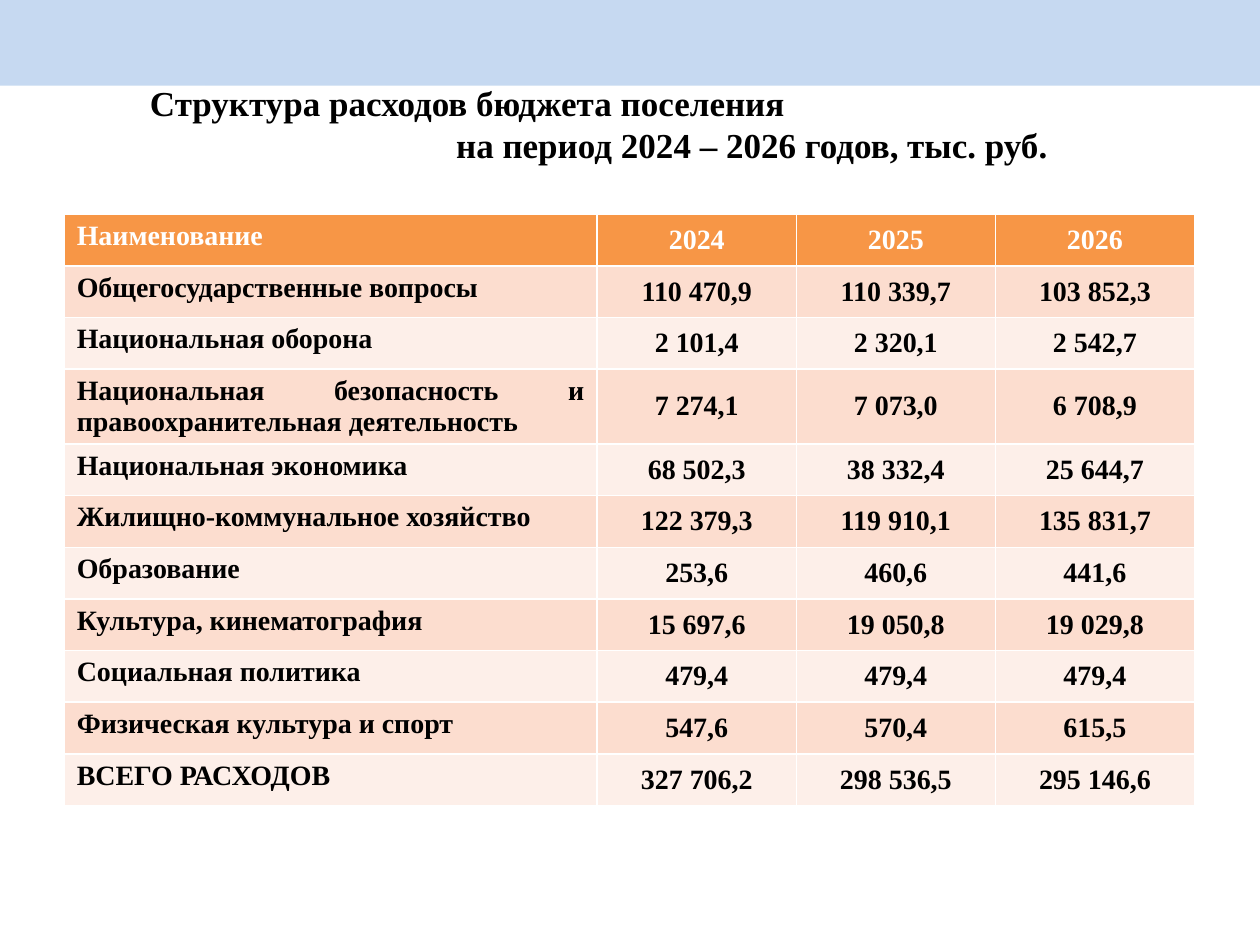
from pptx import Presentation
from pptx.dml.color import RGBColor
from pptx.enum.shapes import MSO_SHAPE
from pptx.enum.text import MSO_ANCHOR, MSO_AUTO_SIZE, PP_ALIGN
from pptx.util import Inches, Pt

COLORS = {
    "band": "C6D9F1",
    "header": "F79646",
    "odd": "FCDDCF",
    "even": "FDEFE9",
    "text": "000000",
    "header_text": "FFFFFF",
}
FONT = "Times New Roman"

# Each title line with its left indent in inches
TITLE = [
    ("Структура расходов бюджета поселения", 0.03),
    ("на период 2024 – 2026 годов, тыс. руб.", 2.46),
]
ROWS = [
    ("Наименование", "2024", "2025", "2026"),
    ("Общегосударственные вопросы", "110 470,9", "110 339,7", "103 852,3"),
    ("Национальная оборона", "2 101,4", "2 320,1", "2 542,7"),
    ("Национальная безопасность и правоохранительная деятельность",
     "7 274,1", "7 073,0", "6 708,9"),
    ("Национальная экономика", "68 502,3", "38 332,4", "25 644,7"),
    ("Жилищно-коммунальное хозяйство", "122 379,3", "119 910,1", "135 831,7"),
    ("Образование", "253,6", "460,6", "441,6"),
    ("Культура, кинематография", "15 697,6", "19 050,8", "19 029,8"),
    ("Социальная политика", "479,4", "479,4", "479,4"),
    ("Физическая культура и спорт", "547,6", "570,4", "615,5"),
    ("ВСЕГО РАСХОДОВ", "327 706,2", "298 536,5", "295 146,6"),
]
COL_WIDTHS = [4.23, 1.58, 1.58, 1.58]
ROW_HEIGHT, TALL_ROW_HEIGHT, TALL_ROW = 0.41, 0.59, 3


def rgb(name):
    return RGBColor.from_string(COLORS[name])


def write(p, text, size, color, align):
    p.alignment = align
    r = p.add_run()
    r.text = text
    for key, value in {"name": FONT, "size": Pt(size), "bold": True}.items():
        setattr(r.font, key, value)
    r.font.color.rgb = rgb(color)


def add_band(slide):
    """Put the plain strip along the top edge, behind everything else."""
    sp = slide.shapes.add_shape(
        MSO_SHAPE.RECTANGLE, 0, 0, Inches(10), Inches(0.68))
    sp.shadow.inherit = False
    sp.fill.solid()
    sp.fill.fore_color.rgb = rgb("band")
    sp.line.fill.background()
    slide.shapes._spTree.insert(2, sp._element)


def fill_title(slide):
    sp = slide.shapes.title
    box = {"left": 1.06, "top": 0.6, "width": 8.43, "height": 0.47}
    for key, value in box.items():
        setattr(sp, key, Inches(value))
    tf = sp.text_frame
    tf.word_wrap = True
    tf.auto_size = MSO_AUTO_SIZE.NONE
    tf.vertical_anchor = MSO_ANCHOR.TOP
    for i, (text, indent) in enumerate(TITLE):
        p = tf.add_paragraph() if i else tf.paragraphs[0]
        p._p.get_or_add_pPr().set("marL", str(Inches(indent)))
        write(p, text, 20, "text", PP_ALIGN.LEFT)


def fill_cell(cell, text, row, col):
    cell.fill.solid()
    fill = "header" if row == 0 else "odd" if row % 2 else "even"
    cell.fill.fore_color.rgb = rgb(fill)
    if col:
        align = PP_ALIGN.CENTER
        cell.vertical_anchor = MSO_ANCHOR.MIDDLE
    else:
        align = PP_ALIGN.JUSTIFY if row else PP_ALIGN.LEFT
    color = "text" if row else "header_text"
    write(cell.text_frame.paragraphs[0], text, 16, color, align)


def add_expense_table(slide):
    heights = [TALL_ROW_HEIGHT if i == TALL_ROW else ROW_HEIGHT
               for i in range(len(ROWS))]
    table = slide.shapes.add_table(
        len(ROWS), len(COL_WIDTHS), Inches(0.51), Inches(1.7),
        Inches(sum(COL_WIDTHS)), Inches(sum(heights))).table
    for column, width in zip(table.columns, COL_WIDTHS):
        column.width = Inches(width)
    for i, (values, height) in enumerate(zip(ROWS, heights)):
        table.rows[i].height = Inches(height)
        for j, text in enumerate(values):
            fill_cell(table.cell(i, j), text, i, j)


def main():
    prs = Presentation()
    prs.slide_width, prs.slide_height = Inches(10), Inches(7.5)
    slide = prs.slides.add_slide(prs.slide_layouts[5])
    add_band(slide)
    fill_title(slide)
    add_expense_table(slide)
    prs.save("out.pptx")


if __name__ == "__main__":
    main()
